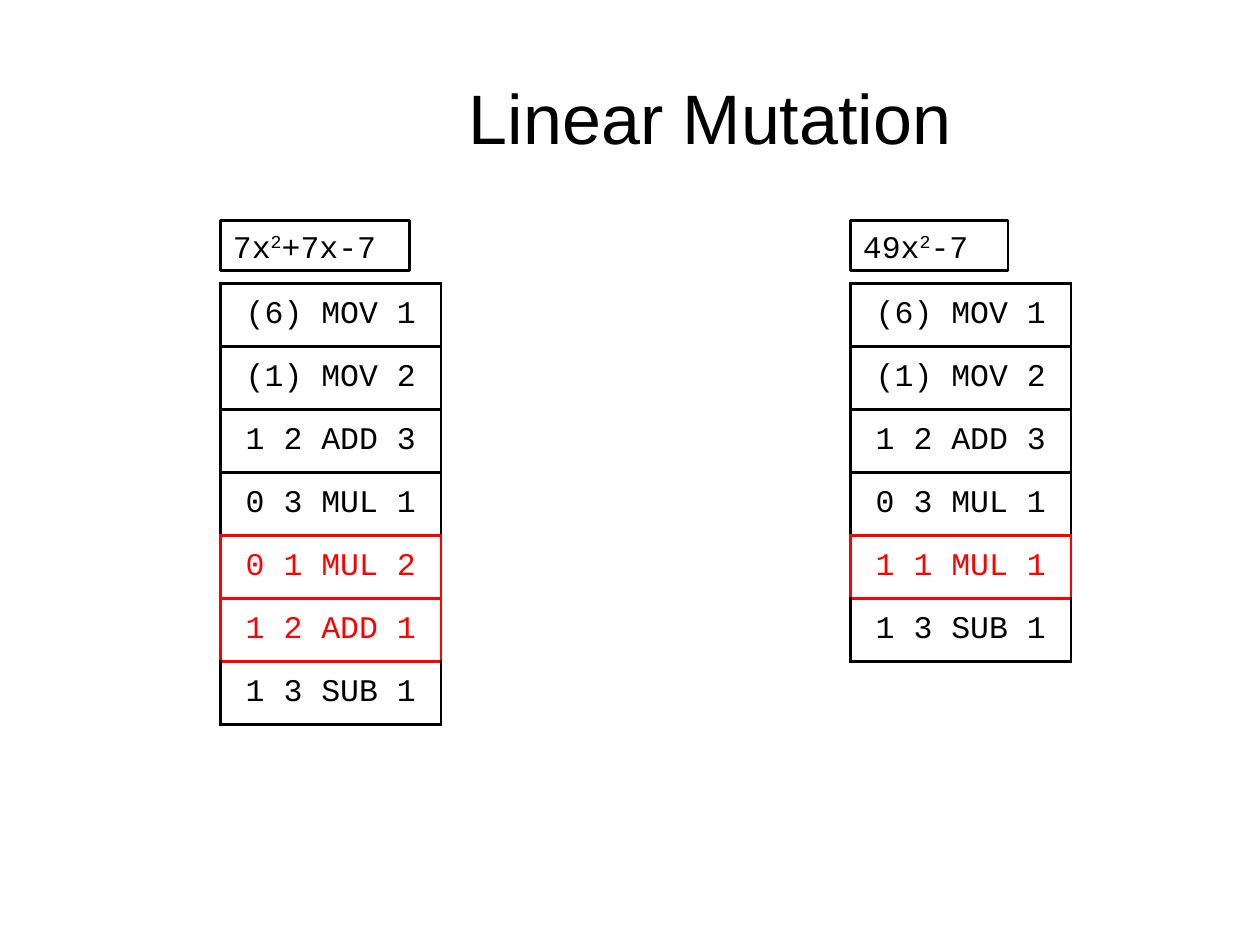
from dataclasses import dataclass

from lxml import etree
from pptx import Presentation
from pptx.dml.color import RGBColor
from pptx.enum.shapes import MSO_SHAPE
from pptx.enum.text import MSO_ANCHOR, PP_ALIGN
from pptx.oxml.ns import qn
from pptx.slide import Slide
from pptx.table import _Cell
from pptx.text.text import Font
from pptx.util import Inches, Pt

RECTANGLE = MSO_SHAPE.RECTANGLE
MIDDLE, TOP = MSO_ANCHOR.MIDDLE, MSO_ANCHOR.TOP
CENTER, LEFT = PP_ALIGN.CENTER, PP_ALIGN.LEFT

BLACK = RGBColor(0x00, 0x00, 0x00)
RED = RGBColor(0xFF, 0x00, 0x00)
LINE_WIDTH = Pt(1.5)
COLUMN_WIDTH = 1.75
ROW_HEIGHT = 0.5
FORMULA_TOP = 1.75
LISTING_TOP = 2.25


@dataclass
class Program:
    left: float
    formula_width: float
    formula: tuple[str, str, str]  # base, exponent, remainder
    instructions: list[str]
    changed: set[int]  # rows affected by the mutation


HEAD = ["(6) MOV 1", "(1) MOV 2", "1 2 ADD 3", "0 3 MUL 1"]
TAIL = ["1 3 SUB 1"]
PROGRAMS = [
    Program(1.75, 1.5, ("7x", "2", "+7x-7"),
            HEAD + ["0 1 MUL 2", "1 2 ADD 1"] + TAIL, {4, 5}),
    Program(6.75, 1.25, ("49x", "2", "-7"),
            HEAD + ["1 1 MUL 1"] + TAIL, {4}),
]


def style_font(font: Font, name: str, size: float, color: RGBColor) -> None:
    font.name = name
    font.size = Pt(size)
    font.bold = False
    font.color.rgb = color


def set_border(cell: _Cell, side: str, color: RGBColor) -> None:
    line = etree.SubElement(cell._tc.get_or_add_tcPr(), qn(f"a:ln{side}"),
                            w=str(LINE_WIDTH))
    fill = etree.SubElement(line, qn("a:solidFill"))
    etree.SubElement(fill, qn("a:srgbClr"), val=str(color))


def add_title(slide: Slide, title: str) -> None:
    box = slide.shapes.add_textbox(Inches(1.77), Inches(0.3),
                                   Inches(7.73), Inches(1.25))
    frame = box.text_frame
    frame.word_wrap = True
    frame.vertical_anchor = MIDDLE
    frame.text = title
    frame.paragraphs[0].alignment = CENTER
    style_font(frame.paragraphs[0].runs[0].font, "Arial", 40, BLACK)


def add_listing(slide: Slide, program: Program) -> None:
    count = len(program.instructions)
    table = slide.shapes.add_table(
        count, 1, Inches(program.left), Inches(LISTING_TOP),
        Inches(COLUMN_WIDTH), Inches(ROW_HEIGHT * count)).table
    table.first_row = False
    table.horz_banding = False

    for row, instruction in enumerate(program.instructions):
        cell = table.cell(row, 0)
        color = RED if row in program.changed else BLACK
        # A border shared with a changed row is red
        above = RED if row - 1 in program.changed else color
        below = RED if row + 1 in program.changed else color
        for side, edge in zip("LRTB", (color, color, above, below)):
            set_border(cell, side, edge)
        cell.fill.background()
        cell.vertical_anchor = MIDDLE
        cell.text_frame.text = instruction
        paragraph = cell.text_frame.paragraphs[0]
        paragraph.alignment = CENTER
        style_font(paragraph.runs[0].font, "Courier New", 18, color)


def add_formula(slide: Slide, program: Program) -> None:
    box = slide.shapes.add_shape(
        RECTANGLE, Inches(program.left), Inches(FORMULA_TOP),
        Inches(program.formula_width), Inches(0.4))
    box.shadow.inherit = False
    box.fill.background()
    box.line.color.rgb = BLACK
    box.line.width = LINE_WIDTH
    frame = box.text_frame
    frame.word_wrap = True
    frame.vertical_anchor = TOP
    paragraph = frame.paragraphs[0]
    paragraph.alignment = LEFT
    for part in program.formula:
        run = paragraph.add_run()
        run.text = part
        style_font(run.font, "Courier New", 18, BLACK)
    exponent = paragraph.runs[1]
    exponent._r.get_or_add_rPr().set("baseline", "30000")


def main() -> None:
    presentation = Presentation()
    presentation.slide_width = Inches(10)
    presentation.slide_height = Inches(7.5)
    slide = presentation.slides.add_slide(presentation.slide_layouts[6])

    add_title(slide, "Linear Mutation")

    # Programs before and after the mutation
    for program in PROGRAMS:
        add_listing(slide, program)
        add_formula(slide, program)

    presentation.save("out.pptx")


if __name__ == "__main__":
    main()
